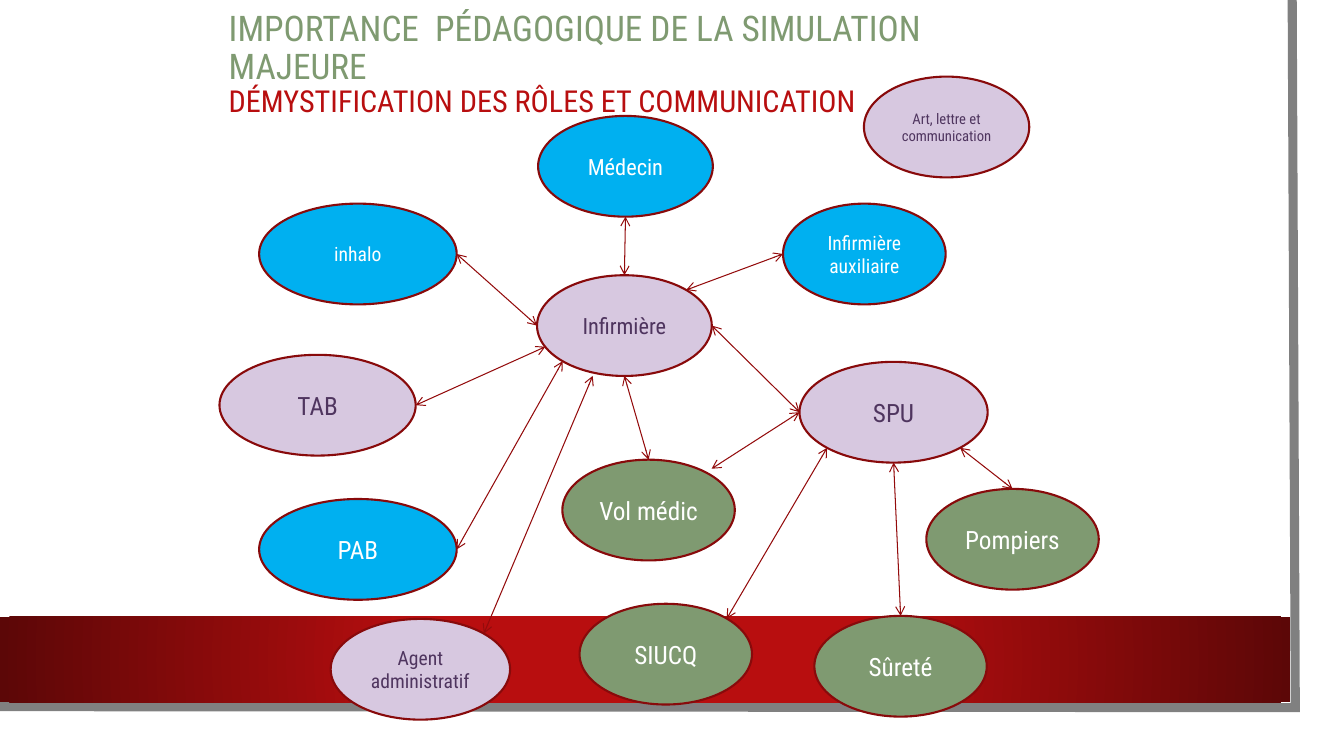
from math import cos, radians, sin

from lxml import etree
from pptx import Presentation
from pptx import util as u
from pptx.dml.color import RGBColor
from pptx.enum import shapes, text
from pptx.oxml import ns

WHITE = RGBColor(0xFF, 0xFF, 0xFF)
GREY = RGBColor(0x80, 0x80, 0x80)
RED = RGBColor(0xB8, 0x0E, 0x0F)
DARK_RED = RGBColor(0x5C, 0x07, 0x07)
OUTLINE = RGBColor(0x88, 0x0A, 0x0B)
LINK = RGBColor(0x93, 0x0B, 0x0C)
BLUE = RGBColor(0x00, 0xB0, 0xF0)
LILAC = RGBColor(0xD7, 0xC8, 0xE0)
PURPLE = RGBColor(0x4F, 0x35, 0x5F)
GREEN = RGBColor(0x7F, 0x9A, 0x71)
FONT = "Roboto Condensed"

deck = Presentation()
deck.slide_width, deck.slide_height = u.Inches(13.33), u.Inches(7.5)
slide = deck.slides.add_slide(deck.slide_layouts[6])


def share(x, y):
    """Turn percentages of the slide's width and height into lengths."""
    return round(deck.slide_width * x / 100), round(deck.slide_height * y / 100)


def add_plain(kind, x, y, width, height, fill):
    """Add a shape without shadow or outline, placed in percentages."""
    shape = slide.shapes.add_shape(kind, *share(x, y), *share(width, height))
    shape.shadow.inherit = False
    shape.fill.solid()
    shape.fill.fore_color.rgb = fill
    shape.line.fill.background()
    return shape


# Paper, its grey edge and the red band
add_plain(shapes.MSO_SHAPE.RECTANGLE, 0, 0, 98.25, 96.93, WHITE)

outline = slide.shapes.build_freeform(*share(96.15, 0))
outline.add_line_segments([share(96.38, 93.6), share(-0.23, 93.47)], close=False)
edge = outline.convert_to_shape()
edge.shadow.inherit = False
edge.fill.background()
edge.line.color.rgb = GREY
edge.line.width = u.Pt(6.5)
etree.SubElement(edge.line._get_or_add_ln(), ns.qn("a:miter"), lim="800000")

band = add_plain(shapes.MSO_SHAPE.RECTANGLE, 0, 81.6, 96, 11.33, RED)
flat_fill = band.fill._xPr.find(ns.qn("a:solidFill"))
radial_fill = etree.fromstring(
    f'<a:gradFill {ns.nsdecls("a")} rotWithShape="1"><a:gsLst>'
    f'<a:gs pos="34000"><a:srgbClr val="{RED}"/></a:gs>'
    f'<a:gs pos="100000"><a:srgbClr val="{DARK_RED}"/></a:gs></a:gsLst>'
    '<a:path path="circle"><a:fillToRect l="50000" t="50000" r="50000" b="50000"/>'
    '</a:path></a:gradFill>')
flat_fill.getparent().replace(flat_fill, radial_fill)

# Title
title = slide.shapes.add_textbox(*share(16.28, 4), *share(62.48, 9.2)).text_frame
title.word_wrap = True
title.vertical_anchor = text.MSO_ANCHOR.MIDDLE
heading = title.paragraphs[0]
heading.line_spacing = 0.9
heading.font.name = FONT
for index, (words, size, colour) in enumerate([
        ("IMPORTANCE  PÉDAGOGIQUE DE LA SIMULATION MAJEURE", 25.2, GREEN),
        ("DÉMYSTIFICATION DES RÔLES ET COMMUNICATION", 21.6, RED)]):
    if index:
        heading.add_line_break()
    run = heading.add_run()
    run.text = words
    run.font.size = u.Pt(size)
    run.font.color.rgb = colour

# Roles: centre x, centre y, width, text size, fill
ROLE_HEIGHT = 13.33
roles = {
    "Infirmière": (46.46, 43.07, 13, 16, LILAC),
    "inhalo": (26.63, 33.6, 14.7, 14, BLUE),
    "TAB": (23.63, 53.6, 14.6, 18, LILAC),
    "Médecin": (46.54, 22, 13, 16, BLUE),
    "SPU": (66.49, 54.53, 14, 18, LILAC),
    "Infirmière auxiliaire": (64.31, 33.6, 12.1, 14, BLUE),
    "PAB": (26.63, 72.67, 14.7, 18, BLUE),
    "SIUCQ": (49.54, 86.53, 12.83, 18, GREEN),
    "Vol médic": (48.26, 67.47, 12.83, 18, GREEN),
    "Sûreté": (67.01, 88.13, 12.83, 18, GREEN),
    "Pompiers": (75.34, 71.33, 12.83, 18, GREEN),
    "Agent administratif": (31.28, 88.53, 13.35, 14, LILAC),
    "Art, lettre et communication": (70.43, 16.8, 12.3, 10.5, LILAC),
}
for name, (x, y, width, size, fill) in roles.items():
    role = add_plain(shapes.MSO_SHAPE.OVAL, x - width / 2, y - ROLE_HEIGHT / 2,
                     width, ROLE_HEIGHT, fill)
    role.line.color.rgb = OUTLINE
    role.line.width = u.Pt(1.5)
    role.text_frame.word_wrap = True
    role.text_frame.vertical_anchor = text.MSO_ANCHOR.MIDDLE
    label = role.text_frame.paragraphs[0]
    label.text = name
    label.alignment = text.PP_ALIGN.CENTER
    label.font.name = FONT
    label.font.size = u.Pt(size)
    label.font.color.rgb = PURPLE if fill == LILAC else WHITE

# Links: each end is a role with an angle on its rim, or a free point
E, SE, S, SW, W, N, NE = 0, 45, 90, 135, 180, 270, 315
links = [
    (("SPU", S), ("Sûreté", N)),
    (("SPU", SE), ("Pompiers", N)),
    ((52.95, 62), ("SPU", W)),
    (("SIUCQ", NE), ("SPU", SW)),
    (("Infirmière", S), ("Vol médic", N)),
    (("Infirmière", E), ("SPU", W)),
    (("Infirmière", NE), ("Infirmière auxiliaire", W)),
    (("Médecin", S), ("Infirmière", N)),
    (("inhalo", E), ("Infirmière", W)),
    (("TAB", E), (40.58, 45.87)),
    (("PAB", E), ("Infirmière", SW)),
    (("Agent administratif", NE), (44.1, 49.73)),
]
for ends in links:
    points = []
    for place, angle in ends:
        if place in roles:
            x, y, width = roles[place][:3]
            points += share(x + width / 2 * cos(radians(angle)),
                            y + ROLE_HEIGHT / 2 * sin(radians(angle)))
        else:
            points += share(place, angle)
    link = slide.shapes.add_connector(shapes.MSO_CONNECTOR.STRAIGHT, *points)
    link.line.color.rgb = LINK
    link.line.width = u.Pt(0.75)
    for tip in ("a:headEnd", "a:tailEnd"):
        etree.SubElement(link.line._get_or_add_ln(), ns.qn(tip), type="arrow")
    etree.SubElement(link._element.spPr, ns.qn("a:effectLst"))

deck.save("out.pptx")
